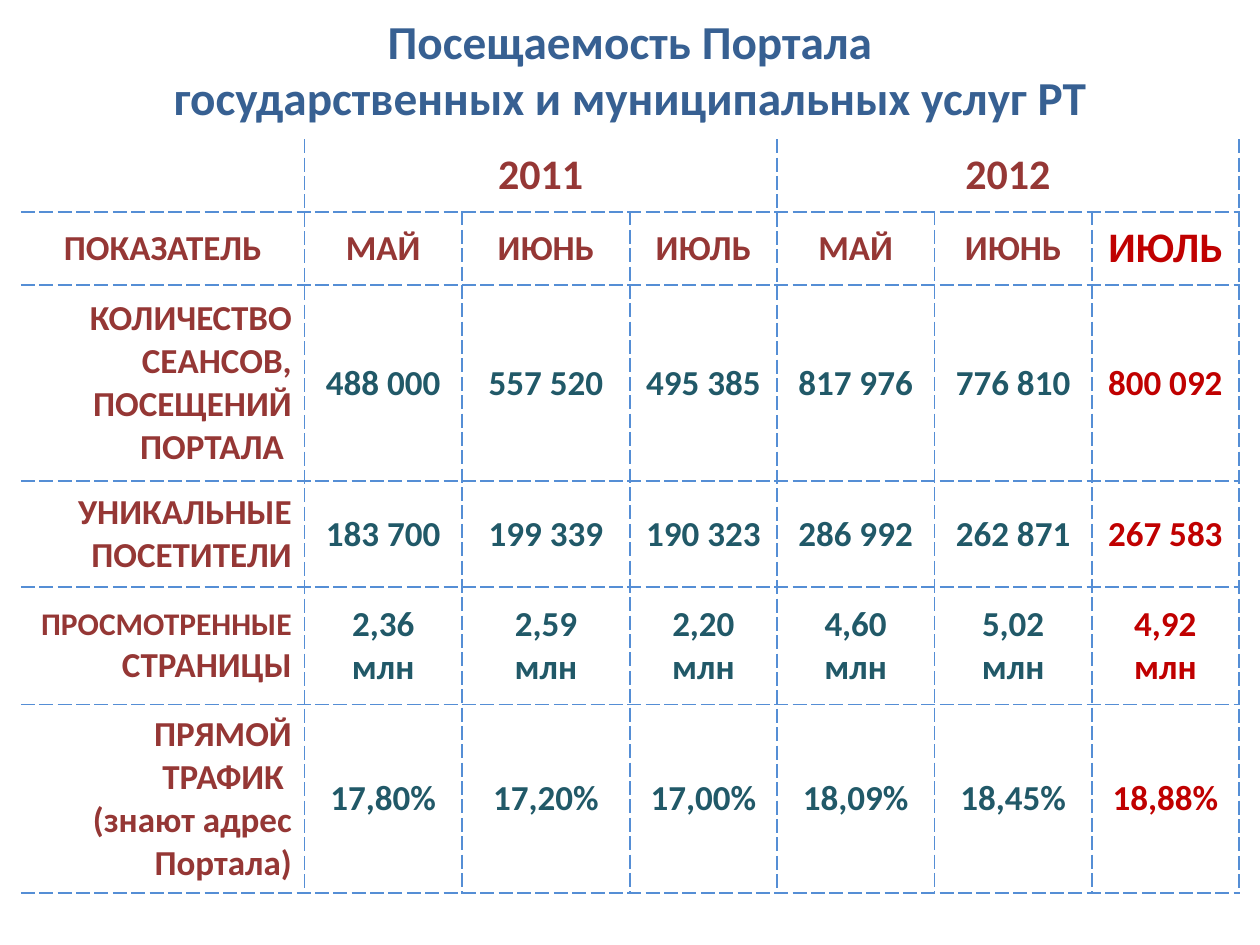
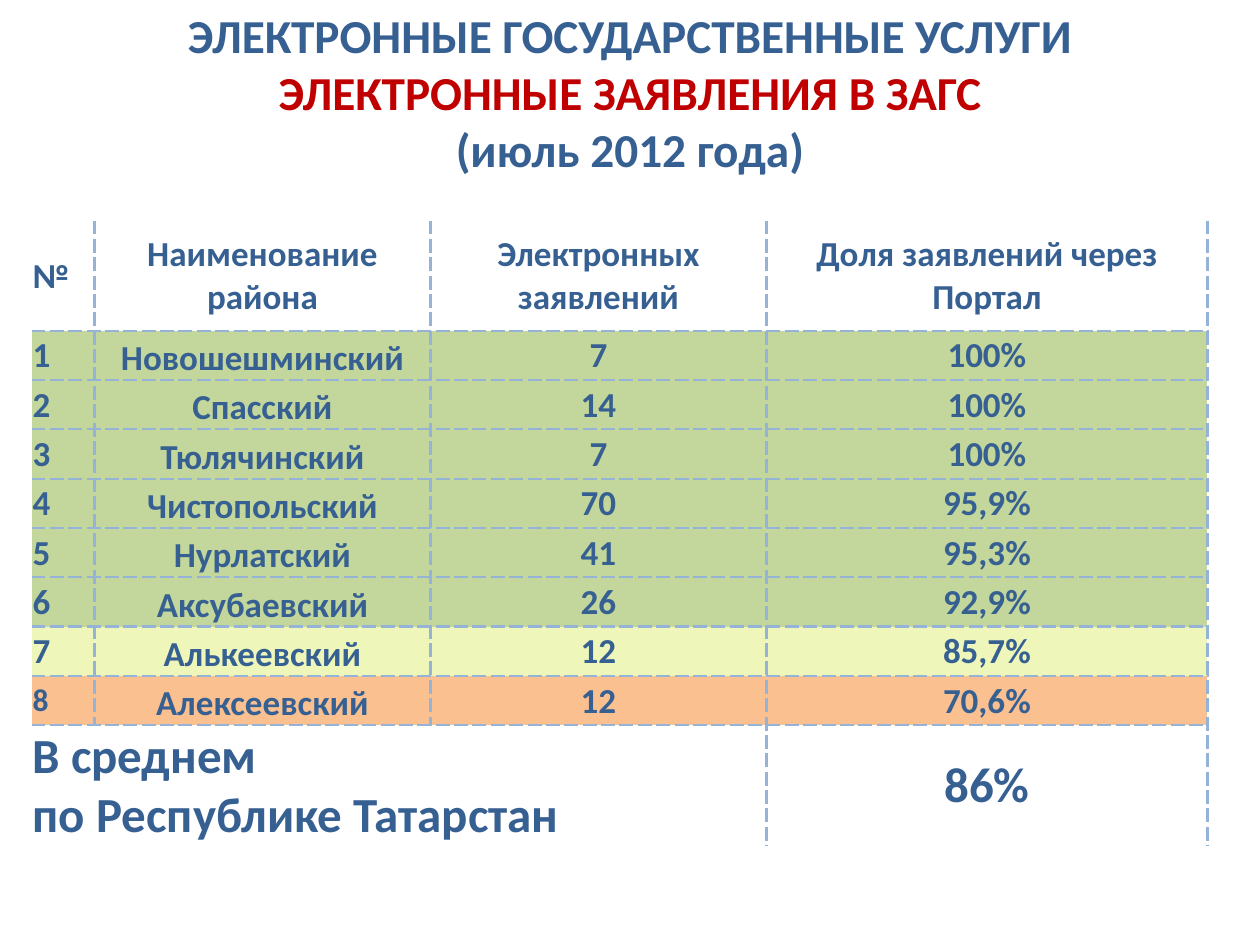
"""Build two slides on portal attendance and electronic registry applications."""
import lxml.etree
import pptx
import pptx.dml.color
import pptx.enum.text
import pptx.oxml.ns
import pptx.util

Pt = pptx.util.Pt
ALIGN = pptx.enum.text.PP_ALIGN
ANCHOR = pptx.enum.text.MSO_ANCHOR
FONT = "Calibri"
NO_STYLE = "{2D5ABB26-0587-4C30-8999-92F81FD0307C}"
COLORS = {
    "title": "376092", "accent": "C00000", "label": "953735", "value": "215968",
    "attendance_line": "558ED5", "districts_line": "95B3D7",
    "high": "C3D69B", "middle": "EEF7B9", "low": "FAC090",
}


def write(text_frame, text, size=20, color="title", align=ALIGN.CENTER, anchor=ANCHOR.MIDDLE,
          margins=None, line_spacing=None):
    """Write one paragraph per line of text in a single format."""
    text_frame.text = text
    for paragraph in text_frame.paragraphs:
        paragraph.alignment = align
        if line_spacing:
            paragraph.line_spacing = line_spacing
        for run in paragraph.runs:
            run.font.name = FONT
            run.font.size = Pt(size)
            run.font.bold = True
            run.font.color.rgb = pptx.dml.color.RGBColor.from_string(COLORS[color])
    holder = text_frame
    holder.vertical_anchor = anchor
    if margins:
        holder.margin_left, holder.margin_top, holder.margin_right, holder.margin_bottom = map(Pt, margins)


def add_grid(slide, left, top, widths, heights, spans, line, line_width, bottom_line):
    """Add an unstyled table with dashed inner lines, a right edge and an optional bottom edge."""
    shape = slide.shapes.add_table(len(heights), len(widths), Pt(left), Pt(top),
                                   Pt(sum(widths)), Pt(sum(heights)))
    table = shape.table
    table.first_row = table.horz_banding = False
    shape._element.find(".//" + pptx.oxml.ns.qn("a:tableStyleId")).text = NO_STYLE
    for column, width in zip(table.columns, widths):
        column.width = Pt(width)
    for row, height in zip(table.rows, heights):
        row.height = Pt(height)
    for row, first, last in spans:
        table.cell(row, first).merge(table.cell(row, last))
    last_row, last_column = len(heights) - 1, len(widths) - 1
    for row in range(len(heights)):
        for column in range(len(widths)):
            cell = table.cell(row, column)
            span_goes_on = column < last_column and table.cell(row, column + 1).is_spanned
            sides = {
                "a:lnL": column > 0 and not cell.is_spanned,
                "a:lnR": cell.is_merge_origin or not span_goes_on,
                "a:lnT": row > 0,
                "a:lnB": row < last_row or bottom_line,
            }
            properties = cell._tc.get_or_add_tcPr()
            for tag in [tag for tag, shown in sides.items() if shown]:
                border = lxml.etree.SubElement(properties, pptx.oxml.ns.qn(tag), w=str(Pt(line_width)))
                fill = lxml.etree.SubElement(border, pptx.oxml.ns.qn("a:solidFill"))
                lxml.etree.SubElement(fill, pptx.oxml.ns.qn("a:srgbClr"), val=COLORS[line])
                lxml.etree.SubElement(border, pptx.oxml.ns.qn("a:prstDash"), val="sysDash")
            cell.fill.background()
    return table


presentation = pptx.Presentation()
presentation.slide_width, presentation.slide_height = Pt(720), Pt(540)

titles = [
    ("Посещаемость Портала\nгосударственных и муниципальных услуг РТ", -8, 94.5, ANCHOR.MIDDLE),
    ("ЭЛЕКТРОННЫЕ ГОСУДАРСТВЕННЫЕ УСЛУГИ\nЭЛЕКТРОННЫЕ ЗАЯВЛЕНИЯ В ЗАГС\n(июль 2012 года)", 0, 105, ANCHOR.TOP),
]
for text, top, height, anchor in titles:
    slide = presentation.slides.add_slide(presentation.slide_layouts[5])
    title = slide.shapes.title
    title.left, title.top, title.width, title.height = Pt(0), Pt(top), Pt(720), Pt(height)
    write(title.text_frame, text, size=27, anchor=anchor)
    title.text_frame.word_wrap = True
    title.text_frame.auto_size = pptx.enum.text.MSO_AUTO_SIZE.NONE
attendance_slide, districts_slide = presentation.slides
red_line = districts_slide.shapes.title.text_frame.paragraphs[1].runs[0]
red_line.font.color.rgb = pptx.dml.color.RGBColor.from_string(COLORS["accent"])

attendance = add_grid(
    attendance_slide, 12, 79.5, [162, 90, 96, 84, 90, 90, 84], [41.75, 41.75, 112, 60.5, 67.25, 107.25],
    [(0, 1, 3), (0, 4, 6)], "attendance_line", 1, True)
attendance_margins = (7.2, 4.8, 7.2, 4.8)
for column, year in [(1, "2011"), (4, "2012")]:
    write(attendance.cell(0, column).text_frame, year, size=24, color="label")
    cell = attendance.cell(0, column)
    cell.vertical_anchor = ANCHOR.MIDDLE
attendance_rows = [
    ["ПОКАЗАТЕЛЬ", "МАЙ", "ИЮНЬ", "ИЮЛЬ", "МАЙ", "ИЮНЬ", "ИЮЛЬ"],
    ["КОЛИЧЕСТВО СЕАНСОВ,\vПОСЕЩЕНИЙ ПОРТАЛА ",
     "488 000", "557 520", "495 385", "817 976", "776 810", "800 092"],
    ["УНИКАЛЬНЫЕ ПОСЕТИТЕЛИ", "183 700", "199 339", "190 323", "286 992", "262 871", "267 583"],
    ["ПРОСМОТРЕННЫЕ\vСТРАНИЦЫ",
     "2,36\nмлн", "2,59\nмлн", "2,20\nмлн", "4,60\nмлн", "5,02\nмлн", "4,92\nмлн"],
    ["ПРЯМОЙ ТРАФИК \n(знают адрес Портала)", "17,80%", "17,20%", "17,00%", "18,09%", "18,45%", "18,88%"],
]
for row, texts in enumerate(attendance_rows, start=1):
    for column, text in enumerate(texts):
        cell = attendance.cell(row, column)
        latest = column == 6
        color = "accent" if latest else "label" if row == 1 or column == 0 else "value"
        write(cell.text_frame, text, size=24 if latest and row == 1 else 20, color=color,
              align=ALIGN.RIGHT if column == 0 and row > 1 else ALIGN.CENTER)
        cell.vertical_anchor = ANCHOR.MIDDLE
        cell.margin_left, cell.margin_top, cell.margin_right, cell.margin_bottom = map(Pt, attendance_margins)
attendance.cell(4, 0).text_frame.paragraphs[0].runs[0].font.size = Pt(18)

districts = add_grid(
    districts_slide, 18, 126, [36, 192, 192, 252], [63] + [27.65] * 8 + [67.75],
    [(9, 0, 2)], "districts_line", 1.5, False)
district_rows = [
    ["№", "Наименование района", "Электронных заявлений", "Доля заявлений через Портал"],
    ["1", "Новошешминский", "7", "100%"],
    ["2", "Спасский", "14", "100%"],
    ["3", "Тюлячинский", "7", "100%"],
    ["4", "Чистопольский", "70", "95,9%"],
    ["5", "Нурлатский", "41", "95,3%"],
    ["6", "Аксубаевский", "26", "92,9%"],
    ["7", "Алькеевский", "12", "85,7%"],
    ["8", "Алексеевский", "12", "70,6%"],
    ["В среднем\nпо Республике Татарстан", None, None, "86%"],
]
row_fills = [None] + ["high"] * 6 + ["middle", "low", None]
for row, (texts, row_fill) in enumerate(zip(district_rows, row_fills)):
    for column, text in enumerate(texts):
        cell = districts.cell(row, column)
        if row_fill:
            cell.fill.solid()
            cell.fill.fore_color.rgb = pptx.dml.color.RGBColor.from_string(COLORS[row_fill])
        if text is None:
            continue
        is_name = column == 1 and row_fill is not None
        size = 28 if row == 9 else 18 if text == "8" else 20
        write(cell.text_frame, text, size=size, align=ALIGN.LEFT if column == 0 else ALIGN.CENTER,
              line_spacing=1.15 if is_name else None)
        cell.vertical_anchor = ANCHOR.TOP if is_name else ANCHOR.MIDDLE
        margins = (5, 0, 5, 0) if is_name else (0.7, 0.7, 0.7, 0)
        cell.margin_left, cell.margin_top, cell.margin_right, cell.margin_bottom = map(Pt, margins)

presentation.save("out.pptx")
